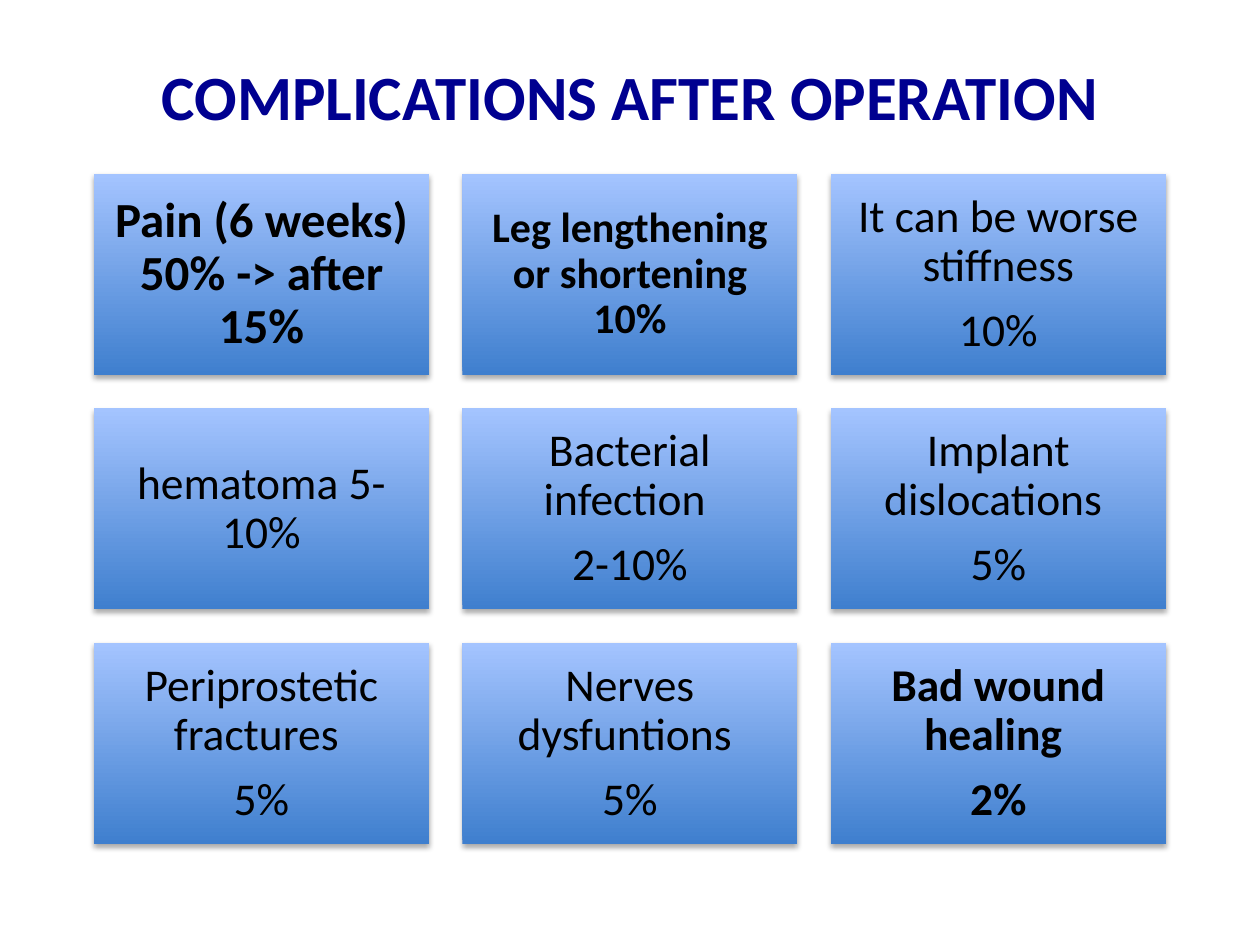
import pptx
import pptx.util
import pptx.dml.color
import pptx.enum.shapes
import pptx.enum.text
from dataclasses import dataclass
from lxml import etree
from pptx.util import Pt


@dataclass(frozen=True)
class Theme:
    font: str = "Calibri"
    title_color: str = "000090"
    text_color: str = "000000"
    card_bottom: str = "3F7FCE"
    card_top: str = "A4C4FF"
    shadow_color: str = "000000"
    title_size: int = 36
    large: int = 28
    medium: int = 26
    small: int = 24


theme = Theme()


def rgb(value):
    return pptx.dml.color.RGBColor.from_string(value)


def write_centred(frame, lines, size, color, bold):
    """Fill a text frame with middle-anchored, centred paragraphs."""
    frame.word_wrap = True
    frame.vertical_anchor = pptx.enum.text.MSO_ANCHOR.MIDDLE
    for index, line in enumerate(lines):
        paragraph = frame.paragraphs[0] if index == 0 else frame.add_paragraph()
        paragraph.text = line
        paragraph.alignment = pptx.enum.text.PP_ALIGN.CENTER
        paragraph.font.name = theme.font
        paragraph.font.size = Pt(size)
        paragraph.font.bold = bold
        paragraph.font.color.rgb = rgb(color)


presentation = pptx.Presentation()
presentation.slide_width = Pt(720)
presentation.slide_height = Pt(540)
slide = presentation.slides.add_slide(presentation.slide_layouts[6])

title = slide.shapes.add_textbox(Pt(36), Pt(9.4), Pt(648), Pt(90))
write_centred(title.text_frame, ["COMPLICATIONS AFTER OPERATION"],
              theme.title_size, theme.title_color, True)

# Each complication: paragraphs, type size, bold
complications = [
    (["Pain (6 weeks) 50% -> after 15%"], theme.large, True),
    (["Leg lengthening or shortening 10%"], theme.small, True),
    (["It can be worse stiffness", "10%"], theme.medium, False),
    (["hematoma 5-10%"], theme.medium, False),
    (["Bacterial infection ", "2-10%"], theme.medium, False),
    (["Implant dislocations ", "5%"], theme.medium, False),
    (["Periprostetic fractures ", "5%"], theme.medium, False),
    (["Nerves dysfuntions ", "5%"], theme.medium, False),
    (["Bad wound healing ", "2%"], theme.medium, True),
]

columns = 3
card_width = 191.4
card_height = 0.6 * card_width
gap = 0.1 * card_width
grid_left = (720 - columns * card_width - (columns - 1) * gap) / 2
grid_top = 99.4

card_shadow = (
    '<a:effectLst xmlns:a="http://schemas.openxmlformats.org/drawingml/2006/main">'
    f'<a:outerShdw blurRad="{Pt(3.1)}" dist="{Pt(1.8)}" dir="5400000" rotWithShape="0">'
    f'<a:srgbClr val="{theme.shadow_color}"><a:alpha val="35000"/></a:srgbClr>'
    '</a:outerShdw></a:effectLst>'
)

for index, (lines, size, bold) in enumerate(complications):
    row, column = divmod(index, columns)
    card = slide.shapes.add_shape(
        pptx.enum.shapes.MSO_SHAPE.RECTANGLE,
        Pt(grid_left + column * (card_width + gap)),
        Pt(grid_top + row * (card_height + gap)),
        Pt(card_width), Pt(card_height))
    card.line.fill.background()
    card.fill.gradient()
    card.fill.gradient_angle = 90
    for stop, position, color in zip(card.fill.gradient_stops, (0, 1),
                                     (theme.card_bottom, theme.card_top)):
        stop.position = position
        stop.color.rgb = rgb(color)

    card.shadow.inherit = False
    properties = card._element.spPr
    empty_effects = properties.find(pptx.oxml.ns.qn("a:effectLst"))
    properties.replace(empty_effects, etree.fromstring(card_shadow))

    frame = card.text_frame
    inset = Pt(0.3 * size)
    frame.margin_left = frame.margin_right = inset
    frame.margin_top = frame.margin_bottom = inset
    write_centred(frame, lines, size, theme.text_color, bold)
    for paragraph in frame.paragraphs:
        paragraph.line_spacing = 0.9
        paragraph.space_after = Pt(0.35 * size)

presentation.save("out.pptx")
